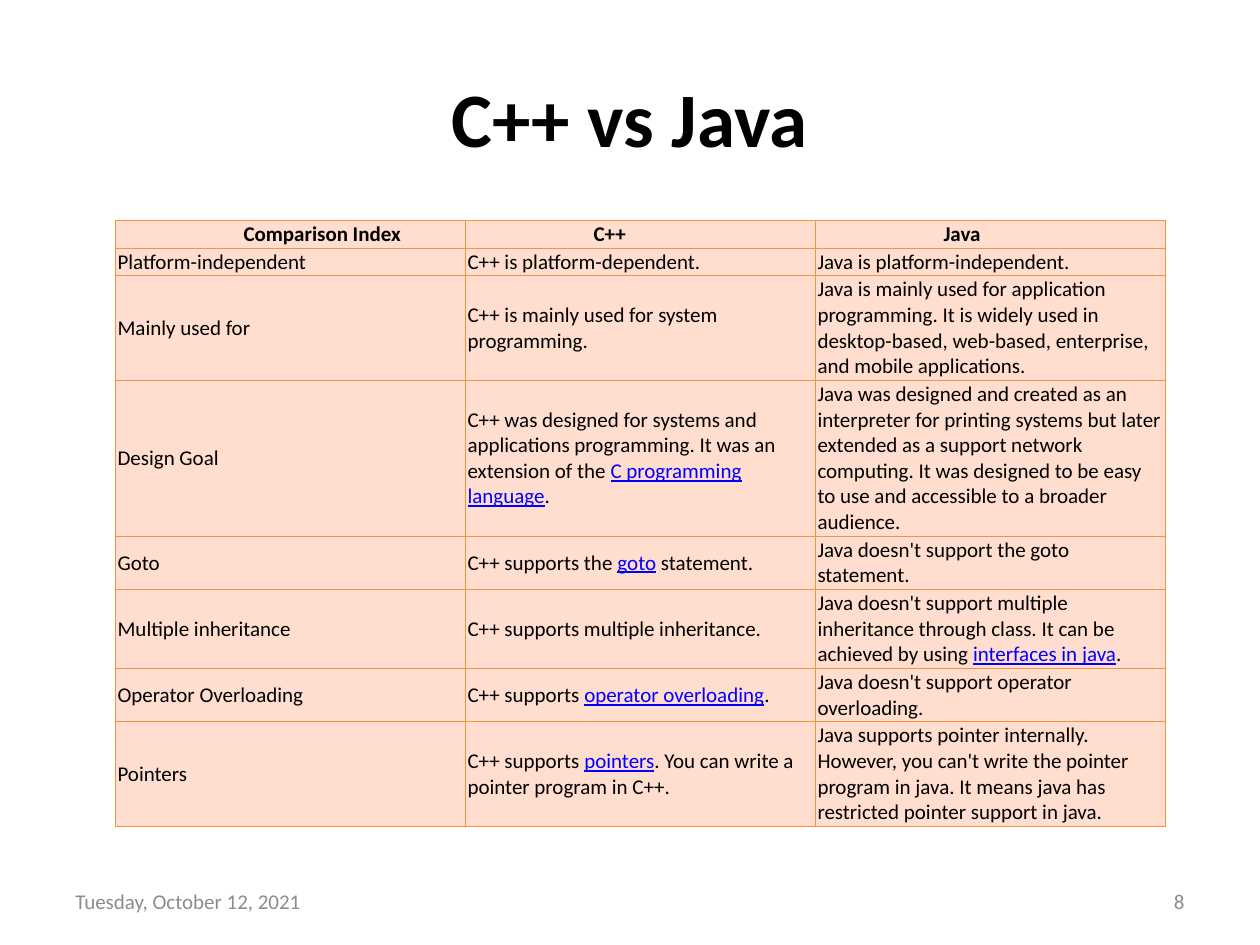
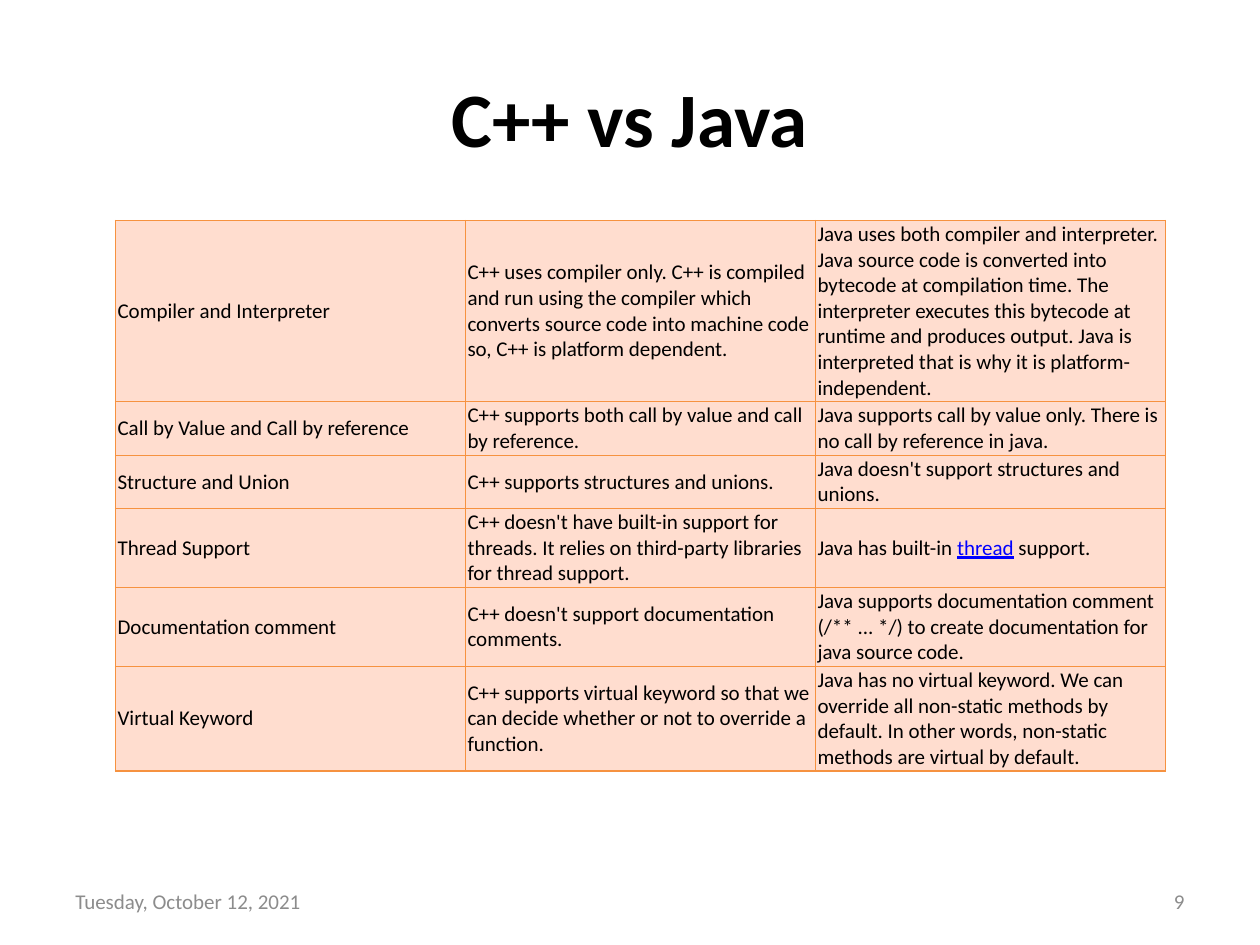
from lxml.etree import SubElement
from pptx import Presentation
from pptx.dml.color import RGBColor
from pptx.enum.text import MSO_ANCHOR, PP_ALIGN
from pptx.oxml.ns import qn
from pptx.util import Inches, Pt

BLACK = RGBColor(0x00, 0x00, 0x00)
LINK_BLUE = RGBColor(0x00, 0x00, 0xFF)
FOOTER_GREY = RGBColor(0x8C, 0x8C, 0x8C)
CELL_PEACH = RGBColor(0xFF, 0xDD, 0xCF)
BORDER_ORANGE = RGBColor(0xF6, 0x92, 0x40)

GRID_COLUMNS, GRID_ROWS = 120, 90
TITLE = "C++ vs Java"
DATE = "Tuesday, October 12, 2021"
FIRST_PAGE_NUMBER = 8
LINK_MARK = "|"

HEADINGS = ("Comparison Index", "C++", "Java")

LANGUAGE_ROWS = [
    (1, "Platform-independent", "C++ is platform-dependent.", "Java is platform-independent."),
    (4, "Mainly used for", "C++ is mainly used for system programming.",
     "Java is mainly used for application programming. It is widely used in "
     "desktop-based, web-based, enterprise, and mobile applications."),
    (6, "Design Goal",
     "C++ was designed for systems and applications programming. "
     "It was an extension of the |C programming language|.",
     "Java was designed and created as an interpreter for printing systems but later "
     "extended as a support network computing. It was designed to be easy to use and "
     "accessible to a broader audience."),
    (2, "Goto", "C++ supports the |goto| statement.",
     "Java doesn't support the goto statement."),
    (3, "Multiple inheritance", "C++ supports multiple inheritance.",
     "Java doesn't support multiple inheritance through class. "
     "It can be achieved by using |interfaces in java|."),
    (2, "Operator Overloading", "C++ supports |operator overloading|.",
     "Java doesn't support operator overloading."),
    (4, "Pointers", "C++ supports |pointers|. You can write a pointer program in C++.",
     "Java supports pointer internally. However, you can't write the pointer program "
     "in java. It means java has restricted pointer support in java."),
]

RUNTIME_ROWS = [
    (7, "Compiler and Interpreter",
     "C++ uses compiler only. C++ is compiled and run using the compiler which "
     "converts source code into machine code so, C++ is platform dependent.",
     "Java uses both compiler and interpreter. Java source code is converted into "
     "bytecode at compilation time. The interpreter executes this bytecode at runtime "
     "and produces output. Java is interpreted that is why it is platform-independent."),
    (2, "Call by Value and Call by reference",
     "C++ supports both call by value and call by reference.",
     "Java supports call by value only. There is no call by reference in java."),
    (2, "Structure and Union", "C++ supports structures and unions.",
     "Java doesn't support structures and unions."),
    (3, "Thread Support",
     "C++ doesn't have built-in support for threads. "
     "It relies on third-party libraries for thread support.",
     "Java has built-in |thread| support."),
    (3, "Documentation comment", "C++ doesn't support documentation comments.",
     "Java supports documentation comment (/** ... */) to create documentation "
     "for java source code."),
    (4, "Virtual Keyword",
     "C++ supports virtual keyword so that we can decide whether or not to override a function.",
     "Java has no virtual keyword. We can override all non-static methods by default. "
     "In other words, non-static methods are virtual by default."),
]


def write_text(frame, text, size=12, color=BLACK, bold=False, align=PP_ALIGN.LEFT, indent=0):
    frame.word_wrap = True
    para = frame.paragraphs[0]
    para.alignment = align
    if indent:
        para.level = 2
        properties = para._p.get_or_add_pPr()
        properties.set("marL", str(indent))
        properties.set("indent", "0")
    for position, part in enumerate(text.split(LINK_MARK)):
        is_link = position % 2 == 1
        span = para.add_run()
        span.text = part
        span.font.name = "Calibri"
        span.font.size = Pt(size)
        span.font.bold = bold
        span.font.underline = is_link
        span.font.color.rgb = LINK_BLUE if is_link else color


def draw_borders(cell):
    properties = cell._tc.get_or_add_tcPr()
    for position, side in enumerate(("lnL", "lnR", "lnT", "lnB")):
        line = SubElement(properties, qn(f"a:{side}"), w=str(Pt(0.75)))
        fill = SubElement(line, qn("a:solidFill"))
        SubElement(fill, qn("a:srgbClr"), val=str(BORDER_ORANGE))
        properties.insert(position, line)


class ComparisonDeck:
    def __init__(self):
        self.deck = Presentation()
        self.deck.slide_width = Inches(10)
        self.deck.slide_height = Inches(7.5)
        self.page = None

    def across(self, columns):
        return round(self.deck.slide_width * columns / GRID_COLUMNS)

    def down(self, rows):
        return round(self.deck.slide_height * rows / GRID_ROWS)

    def add_page(self):
        self.page = self.deck.slides.add_slide(self.deck.slide_layouts[6])

    def add_text(self, text, left, top, width, height, **style):
        box = self.page.shapes.add_textbox(
            self.across(left), self.down(top), self.across(width), self.down(height))
        box.text_frame.vertical_anchor = MSO_ANCHOR.MIDDLE
        write_text(box.text_frame, text, **style)

    def add_title(self):
        self.add_text(TITLE, 6, 3.6, 108, 15, size=44, bold=True, align=PP_ALIGN.CENTER)

    def add_footer(self, number):
        self.add_text(DATE, 6, 83.4, 28, 4.8, color=FOOTER_GREY)
        self.add_text(str(number), 86, 83.4, 28, 4.8, color=FOOTER_GREY, align=PP_ALIGN.RIGHT)

    def add_comparison(self, rows, headings=None):
        entries = [(1, *headings), *rows] if headings else rows
        heights = [self.down(2.44 * lines + 0.2) for lines, *_ in entries]
        table = self.page.shapes.add_table(
            len(entries), len(HEADINGS), self.across(11), self.down(21),
            self.across(100), sum(heights)).table
        table.first_row = bool(headings)
        table.horz_banding = False
        for row_index, (_, *texts) in enumerate(entries):
            table.rows[row_index].height = heights[row_index]
            is_heading = bool(headings) and row_index == 0
            for column_index, text in enumerate(texts):
                self.fill_cell(table.cell(row_index, column_index), text, is_heading)

    def fill_cell(self, cell, text, is_heading):
        cell.margin_left = cell.margin_right = self.across(0.2)
        cell.margin_top = cell.margin_bottom = self.down(0.1)
        cell.vertical_anchor = MSO_ANCHOR.MIDDLE
        cell.fill.solid()
        cell.fill.fore_color.rgb = CELL_PEACH
        draw_borders(cell)
        write_text(cell.text_frame, text, bold=is_heading,
                   indent=self.across(12) if is_heading else 0)


def main():
    show = ComparisonDeck()
    contents = [(LANGUAGE_ROWS, HEADINGS), (RUNTIME_ROWS, None)]
    for number, (rows, headings) in enumerate(contents, FIRST_PAGE_NUMBER):
        show.add_page()
        show.add_title()
        show.add_comparison(rows, headings)
        show.add_footer(number)
    show.deck.save("out.pptx")


if __name__ == "__main__":
    main()
